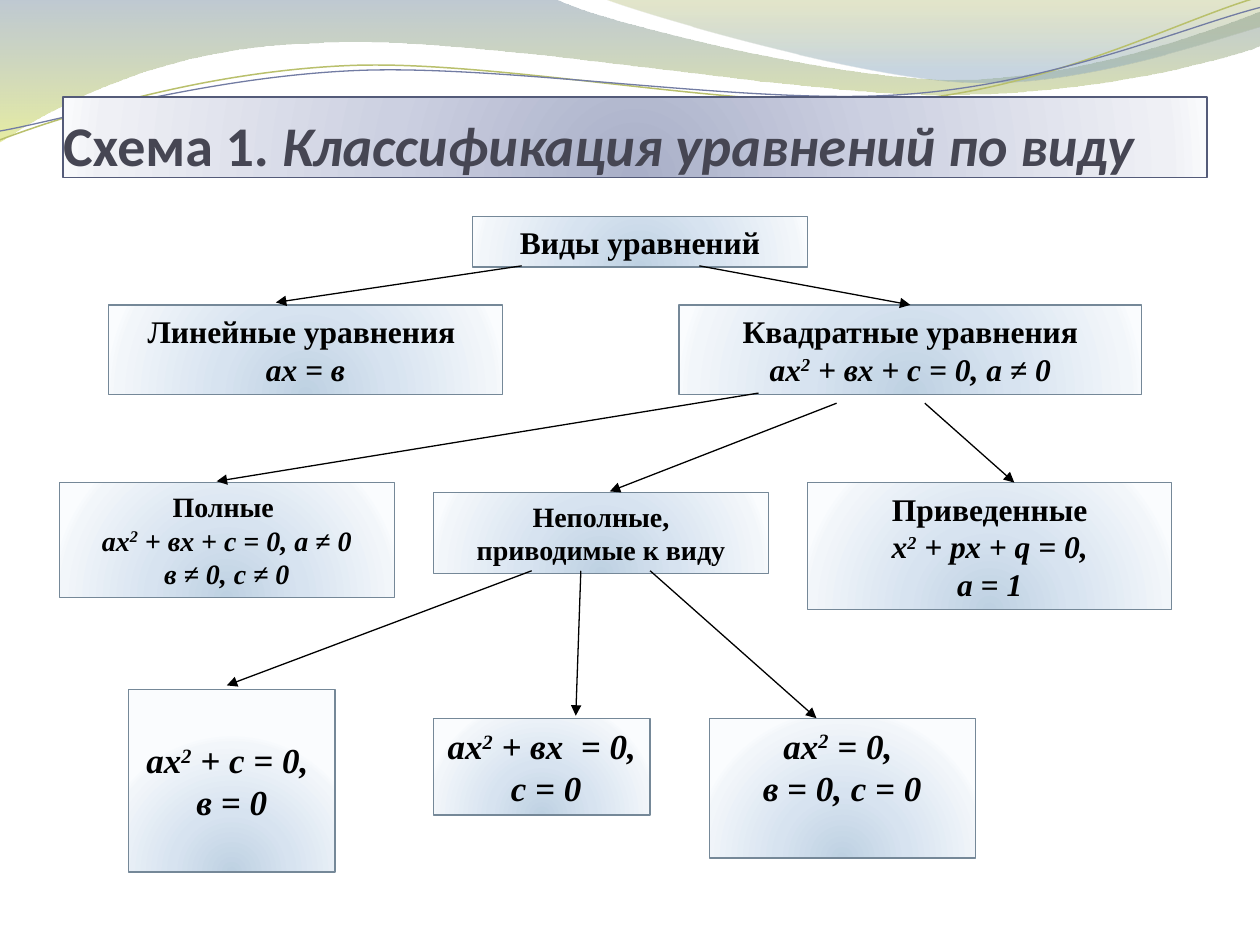
from math import cos, radians, sin

from pptx import Presentation
from pptx.dml.color import RGBColor
from pptx.enum.shapes import MSO_CONNECTOR, MSO_SHAPE
from pptx.enum.text import MSO_ANCHOR, PP_ALIGN
from pptx.oxml import parse_xml
from pptx.oxml.ns import nsdecls, qn
from pptx.util import Inches, Pt

RECT, STRAIGHT = MSO_SHAPE.RECTANGLE, MSO_CONNECTOR.STRAIGHT
TOP, MID, LOW = MSO_ANCHOR.TOP, MSO_ANCHOR.MIDDLE, MSO_ANCHOR.BOTTOM
LEFT, CENTER = PP_ALIGN.LEFT, PP_ALIGN.CENTER

THEME = {
    "head": {"font": "Calibri", "size": 32, "ink": "464653", "edge": "545B79",
             "stops": [(0, "A9AFC8"), (43, "CCD0E1"), (93, "EFF0F5"), (100, "F9FAFC")]},
    "box": {"font": "Times New Roman", "ink": "000000", "edge": "758898",
            "stops": [(0, "BED1E2"), (43, "D7E3F0"), (93, "F2F6FA"), (100, "FAFCFE")]},
    "arrow": "000000",
    "thin": 0.75,
}

TITLE = (0.5, 0.77, 9.08, 0.64)
HEAD = [("Схема 1.", False), (" Классификация уравнений по виду", True)]

# name: place, type size, anchor, plain lines, formula lines (^ raises the next sign)
BOXES = {
    "root": ((3.75, 1.72, 2.66, 0.4), 18, MID, ["Виды уравнений"], []),
    "linear": ((0.86, 2.42, 3.13, 0.71), 18, MID,
               ["Линейные уравнения "], ["ах = в"]),
    "square": ((5.39, 2.42, 3.67, 0.71), 18, MID,
               ["Квадратные уравнения"], ["ах^2 + вх + с = 0, а ≠ 0"]),
    "full": ((0.47, 3.83, 2.66, 0.91), 16, MID,
             ["Полные "], ["ах^2 + вх + с = 0, а ≠ 0", "в ≠ 0, с ≠ 0"]),
    "part": ((3.44, 3.91, 2.66, 0.64), 16, MID,
             ["Неполные,", "приводимые к виду"], []),
    "monic": ((6.41, 3.83, 2.89, 1.01), 18, MID,
              ["Приведенные"], ["х^2 + рх + q = 0,", "а = 1"]),
    "no_b": ((1.02, 5.47, 1.64, 1.45), 20, MID, [], ["ах^2 + с = 0, ", "в = 0"]),
    "no_c": ((3.44, 5.7, 1.72, 0.77), 20, MID, [], ["ах^2 + вх  = 0,", " с = 0"]),
    "no_bc": ((5.63, 5.7, 2.11, 1.11), 20, TOP, [], ["ах^2 = 0, ", "в = 0, с = 0"]),
}

# start, end, box whose top middle the arrow meets
ARROWS = [
    ((4.14, 2.11), (2.19, 2.4), None),
    ((5.55, 2.11), (7.23, 2.42), "square"),
    ((6.02, 3.12), (1.72, 3.82), None),
    ((6.64, 3.2), (4.84, 3.9), None),
    ((7.34, 3.2), (8.05, 3.83), None),
    ((4.22, 4.53), (1.8, 5.44), None),
    ((4.61, 4.53), (4.57, 5.68), None),
    ((5.16, 4.53), (6.48, 5.7), None),
]

# start, then steps: one point is a line, three points are a curve
BANDS = [
    ([[(0, 0)], [(4.4, -0.01)],
      [(4.76, 0.17), (6.64, 0.63), (7.58, 0.63)],
      [(8.53, 0.63), (9.58, 0.26), (10, 0.09)], [(10.01, 0.36)],
      [(9.83, 0.44), (8.7, 0.76), (7.46, 0.75)],
      [(6.22, 0.75), (3.82, 0.28), (2.57, 0.34)],
      [(1.29, 0.36), (0.46, 0.83), (-0.01, 1.13)], [(0, 0)]],
     [(0, "72889B", 45), (100, "D3DE57", 55)]),
    ([[(4.79, -0.01)],
      [(5.09, 0.11), (6.82, 0.62), (7.69, 0.65)],
      [(8.56, 0.69), (9.61, 0.32), (10, 0.21)], [(10, 0)], [(4.79, -0.01)]],
     [(0, "A4AC50", 30), (80, "84A3BD", 45)]),
]
# steps as they lie after the turn, centre of the turn, colour, width
WAVES = [
    ([[(0, 1.11)],
      [(0.48, 0.93), (1.58, 0.57), (2.77, 0.52)],
      [(3.95, 0.47), (5.93, 0.89), (7.13, 0.8)],
      [(8.33, 0.71), (9.38, 0.15), (9.98, -0.02)]], (4.99, 0.57), "B9C06C", 0.85),
    ([[(0, 1.04)],
      [(0.47, 0.96), (1.64, 0.61), (2.83, 0.56)],
      [(4.03, 0.51), (5.97, 0.84), (7.17, 0.75)],
      [(8.36, 0.67), (9.41, 0.21), (10, 0.06)]], (5, 0.59), "727CA3", 0.75),
]
TILT = 2.7
LINEAR = '<a:lin ang="5400000" scaled="0"/>'
RADIAL = ('<a:path path="circle"><a:fillToRect l="50000" t="130000" '
          'r="50000" b="-30000"/></a:path>')


def set_grad(shape, stops, way):
    """Fill with stops of (percent, colour[, opacity])."""
    marks = ""
    for at, tint, *alpha in stops:
        clear = f'<a:alpha val="{alpha[0] * 1000}"/>' if alpha else ""
        marks += (f'<a:gs pos="{at * 1000}"><a:srgbClr val="{tint}">'
                  f'{clear}</a:srgbClr></a:gs>')
    shape.fill.gradient()
    props = shape._element.spPr
    props.replace(props.find(qn("a:gradFill")), parse_xml(
        f'<a:gradFill {nsdecls("a")} rotWithShape="1">'
        f'<a:gsLst>{marks}</a:gsLst>{way}</a:gradFill>'))


def set_line(shape, tint, width):
    shape.line.color.rgb = RGBColor.from_string(tint)
    shape.line.width = Pt(width)


def level(steps, hub):
    """Turn the points clockwise by TILT about the hub."""
    c, s = cos(radians(TILT)), sin(radians(TILT))
    hx, hy = hub
    return [[(hx + (x - hx) * c - (y - hy) * s, hy + (x - hx) * s + (y - hy) * c)
             for x, y in step] for step in steps]


def add_free(slide, steps, close):
    """Draw straight legs, then merge each leg triple into one Bezier curve."""
    first, *rest = [(Inches(x), Inches(y)) for step in steps for x, y in step]
    pen = slide.shapes.build_freeform(*first)
    pen.add_line_segments(rest, close=close)
    shape = pen.convert_to_shape()
    shape.shadow.inherit = False
    legs = iter(list(shape._element.iter(qn("a:lnTo"))))
    for step in steps[1:]:
        group = [next(legs) for _ in step]
        if len(group) == 3:
            curve = parse_xml(f'<a:cubicBezTo {nsdecls("a")}/>')
            group[0].addprevious(curve)
            for leg in group:
                curve.append(leg[0])
                leg.getparent().remove(leg)
    return shape


def add_run(para, text, look, size, slant, lift=False):
    run = para.add_run()
    run.text = text
    form = {"name": look["font"], "size": Pt(size), "bold": True, "italic": slant}
    for key, value in form.items():
        setattr(run.font, key, value)
    run.font.color.rgb = RGBColor.from_string(look["ink"])
    if lift:
        run.font._element.set("baseline", "30000")


def add_box(slide, place, look, anchor):
    box = slide.shapes.add_shape(RECT, *map(Inches, place))
    box.shadow.inherit = False
    set_grad(box, look["stops"], RADIAL)
    set_line(box, look["edge"], THEME["thin"])
    box.text_frame.word_wrap = True
    box.text_frame.vertical_anchor = anchor
    return box


def add_head(slide):
    look = THEME["head"]
    frame = add_box(slide, TITLE, look, LOW).text_frame
    for side in ("left", "right", "bottom"):
        setattr(frame, f"margin_{side}", 0)
    para = frame.paragraphs[0]
    para.alignment = LEFT
    for text, slant in HEAD:
        add_run(para, text, look, look["size"], slant)


def add_node(slide, place, size, anchor, plain, maths):
    look = THEME["box"]
    box = add_box(slide, place, look, anchor)
    frame = box.text_frame
    lines = [(text, False) for text in plain] + [(text, True) for text in maths]
    for i, (text, slant) in enumerate(lines):
        para = frame.add_paragraph() if i else frame.paragraphs[0]
        para.alignment = CENTER
        base, *tails = text.split("^")
        add_run(para, base, look, size, slant)
        for tail in tails:
            add_run(para, tail[0], look, size, slant, True)
            add_run(para, tail[1:], look, size, slant)
    return box


def add_arrow(slide, start, end, goal):
    link = slide.shapes.add_connector(STRAIGHT, *map(Inches, start + end))
    set_line(link, THEME["arrow"], THEME["thin"])
    link.line._get_or_add_ln().append(
        parse_xml(f'<a:tailEnd {nsdecls("a")} type="triangle"/>'))
    link._element.spPr.append(parse_xml(f'<a:effectLst {nsdecls("a")}/>'))
    if goal:
        link.end_connect(goal, 0)


def main():
    deck = Presentation()
    deck.slide_width, deck.slide_height = Inches(10), Inches(7.5)
    slide = deck.slides.add_slide(deck.slide_layouts[6])
    for steps, stops in BANDS:
        band = add_free(slide, steps, True)
        set_grad(band, stops, LINEAR)
        band.line.fill.background()
    for steps, hub, tint, width in WAVES:
        wave = add_free(slide, level(steps, hub), False)
        wave.rotation = -TILT
        wave.fill.background()
        set_line(wave, tint, width)
    add_head(slide)
    nodes = {name: add_node(slide, *data) for name, data in BOXES.items()}
    for start, end, goal in ARROWS:
        add_arrow(slide, start, end, nodes.get(goal))
    deck.save("out.pptx")


if __name__ == "__main__":
    main()
